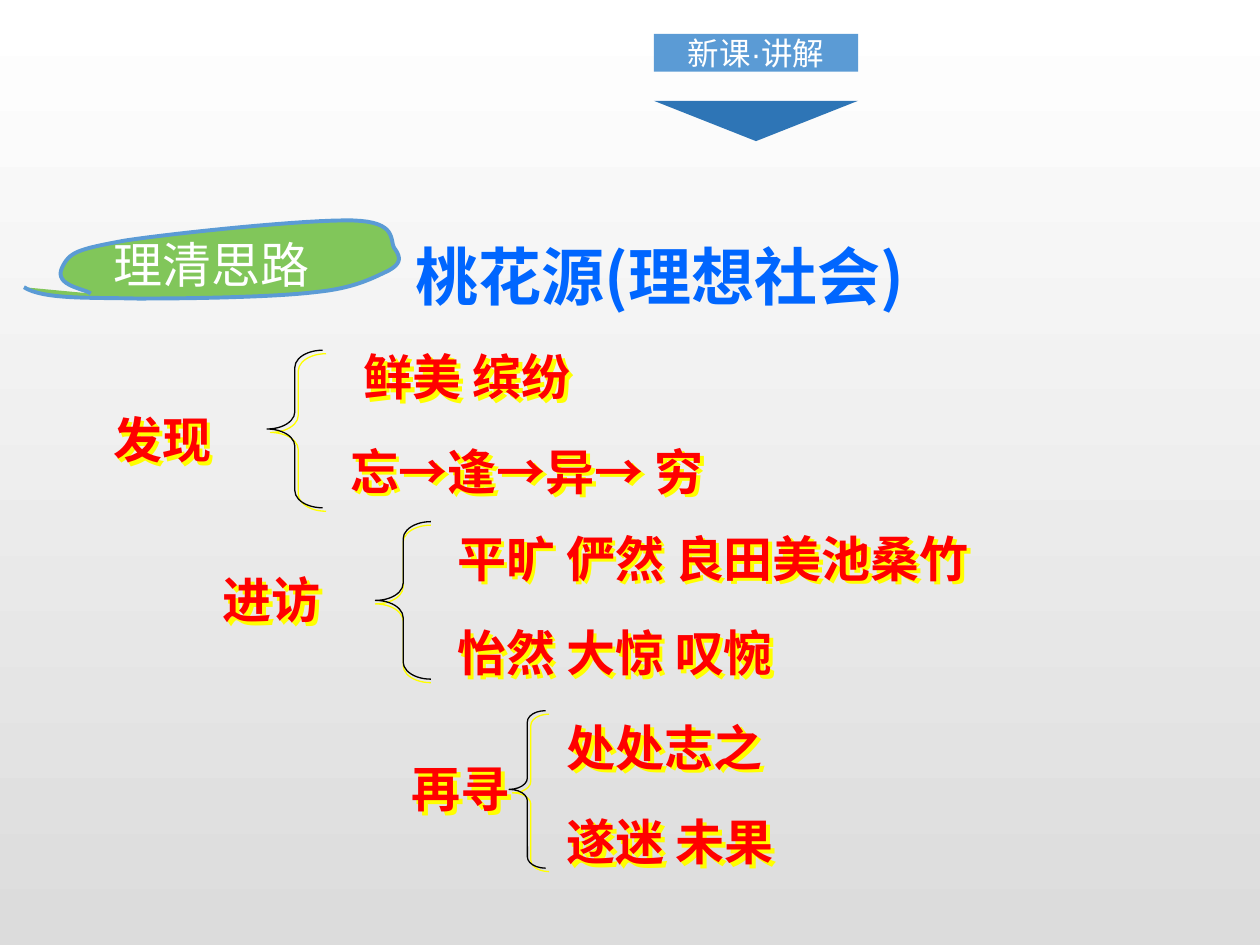
import pptx
import pptx.util
import pptx.dml.color
import pptx.enum.shapes
import pptx.enum.text
import lxml.etree

Inches = pptx.util.Inches
Shape = pptx.enum.shapes.MSO_SHAPE
Align = pptx.enum.text.PP_ALIGN

COLORS = {
    "white": "FFFFFF", "gray": "DCDCDC", "green": "81C65A", "sky": "5B9BD5",
    "navy": "2E75B6", "red": "FF0000", "blue": "0066FF", "black": "000000",
    "yellow": "FFFF00",
}
SC = "Noto Sans CJK SC"
JP = "Noto Sans CJK JP"
HEAD = ("桃花源(理想社会)", (3.2, 1.83, 4.83, 0.71))
TAB = ("新课·讲解", (5.19, 0.27, 1.62, 0.3))
ARROW = (5.19, 0.8, 1.62, 0.32)
LEAF = "理清思路"
START = (0.19, 2.28)
CURVES = [
    ((0.35, 2.38), (0.72, 2.36), (1.1, 2.37)),
    ((1.48, 2.37), (2.16, 2.36), (2.49, 2.32)),
    ((2.82, 2.29), (2.97, 2.2), (3.08, 2.15)),
    ((3.19, 2.09), (3.18, 2.04), (3.13, 1.97)),
    ((3.09, 1.91), (3.16, 1.76), (2.8, 1.75)),
    ((2.45, 1.74), (1.38, 1.85), (0.99, 1.91)),
    ((0.61, 1.98), (0.55, 2), (0.49, 2.13)),
    ((0.43, 2.27), (0.67, 2.29), (0.72, 2.33)),
]
STEPS = 16
LINE = 0.57
GAP = 0.75
BRANCHES = [
    {"brace": (2.12, 2.78, 0.44, 1.25), "cast": (2.8, 45), "top": 2.7,
     "label": ("发现", 0.8, 3.2, 2.65),
     "items": [("鲜美 缤纷", 2.79, 4.42), ("忘→逢→异→ 穷", 2.68, 3.54)]},
    {"brace": (2.98, 4.14, 0.44, 1.25), "cast": (2, 90), "top": 4.14,
     "label": ("进访", 1.67, 4.47, 1.53),
     "items": [("平旷 俨然 良田美池桑竹", 3.53, 5.14), ("怡然 大惊 叹惋", 3.53, 3.5)]},
    {"brace": (4.04, 5.64, 0.29, 1.25), "cast": (2.8, 45), "top": 5.64,
     "label": ("再寻", 3.17, 5.97, 1.02),
     "items": [("处处志之", 4.4, 3.43), ("遂迷 未果", 4.4, 2.33)]},
]


def rgb(name):
    return pptx.dml.color.RGBColor.from_string(COLORS[name])


def place(box):
    return [Inches(v) for v in box]


def write(shape, text, size=28, font=SC, east=None, color="red", bold=False,
          align=Align.LEFT, pad=(0.1, 0.05, 0.1, 0.05)):
    frame = shape.text_frame
    frame.word_wrap = True
    frame.auto_size = pptx.enum.text.MSO_AUTO_SIZE.NONE
    frame.vertical_anchor = pptx.enum.text.MSO_ANCHOR.MIDDLE
    (frame.margin_left, frame.margin_top,
     frame.margin_right, frame.margin_bottom) = place(pad)
    para = frame.paragraphs[0]
    para.alignment = align
    run = para.add_run()
    run.text = text
    run.font.size = pptx.util.Pt(size)
    run.font.name = font
    run.font.bold = bold
    run.font.color.rgb = rgb(color)
    face = lxml.etree.SubElement(run.font._element, pptx.oxml.ns.qn("a:ea"))
    face.set("typeface", east or font)


def paint(shape, fill=None, line=None, width=0.75):
    shape.shadow.inherit = False
    if fill:
        shape.fill.solid()
        shape.fill.fore_color.rgb = rgb(fill)
    else:
        shape.fill.background()
    if line:
        shape.line.color.rgb = rgb(line)
        shape.line.width = pptx.util.Pt(width)
    else:
        shape.line.fill.background()


def cast(shape, dist=2.8, angle=45):
    qn = pptx.oxml.ns.qn
    shape.shadow.inherit = False
    glow = shape._element.spPr.find(qn("a:effectLst"))
    drop = lxml.etree.SubElement(
        glow, qn("a:outerShdw"), dist=str(int(pptx.util.Pt(dist))),
        dir=str(angle * 60000), algn="ctr", rotWithShape="0")
    lxml.etree.SubElement(drop, qn("a:srgbClr"), val=COLORS["yellow"])


def trace(start, curves):
    spots = []
    for a, b, end in curves:
        for i in range(1, STEPS + 1):
            t = i / STEPS
            u = 1 - t
            spots.append(tuple(
                Inches(u**3 * p + 3 * u * u * t * q + 3 * u * t * t * r + t**3 * s)
                for p, q, r, s in zip(start, a, b, end)))
        start = end
    return spots


def draw_leaf(shapes):
    pen = shapes.build_freeform(*place(START), scale=1.0)
    pen.add_line_segments(trace(START, CURVES), close=False)
    leaf = pen.convert_to_shape()
    paint(leaf, "green", "sky", 2.25)
    write(leaf, LEAF, color="white", align=Align.CENTER, pad=(0.1, 0.12, 0.1, 0.05))


def draw_tab(shapes):
    group = shapes.add_group_shape().shapes
    tab = group.add_shape(Shape.RECTANGLE, *place(TAB[1]))
    paint(tab, "sky")
    write(tab, TAB[0], size=18, font="Arial", east=SC, color="white",
          align=Align.CENTER, pad=(0, 0, 0, 0))
    arrow = group.add_shape(Shape.ISOSCELES_TRIANGLE, *place(ARROW))
    arrow.rotation = 180
    paint(arrow, "navy")


def draw_branch(shapes, branch):
    group = shapes.add_group_shape().shapes
    brace = group.add_shape(Shape.LEFT_BRACE, *place(branch["brace"]))
    brace.adjustments[0] = 0.31
    paint(brace, line="black")
    cast(brace, *branch["cast"])
    rows = [branch["label"]]
    for i, (text, left, width) in enumerate(branch["items"]):
        rows.append((text, left, branch["top"] + i * GAP, width))
    for text, left, top, width in rows:
        box = group.add_textbox(*place((left, top, width, LINE)))
        write(box, text, bold=True)
        cast(box)


def main():
    deck = pptx.Presentation()
    deck.slide_width, deck.slide_height = place((10, 7.5))
    slide = deck.slides.add_slide(deck.slide_layouts[5])
    back = slide.background.fill
    back.gradient()
    back.gradient_angle = 270
    for stop, name, spot in zip(back.gradient_stops, ("white", "gray"), (0, 1)):
        stop.color.rgb = rgb(name)
        stop.position = spot
    head = slide.shapes.title
    head.left, head.top, head.width, head.height = place(HEAD[1])
    write(head, HEAD[0], size=36, font=JP, color="blue", bold=True)
    draw_leaf(slide.shapes)
    draw_tab(slide.shapes)
    for branch in BRANCHES:
        draw_branch(slide.shapes, branch)
    deck.save("out.pptx")


if __name__ == "__main__":
    main()
